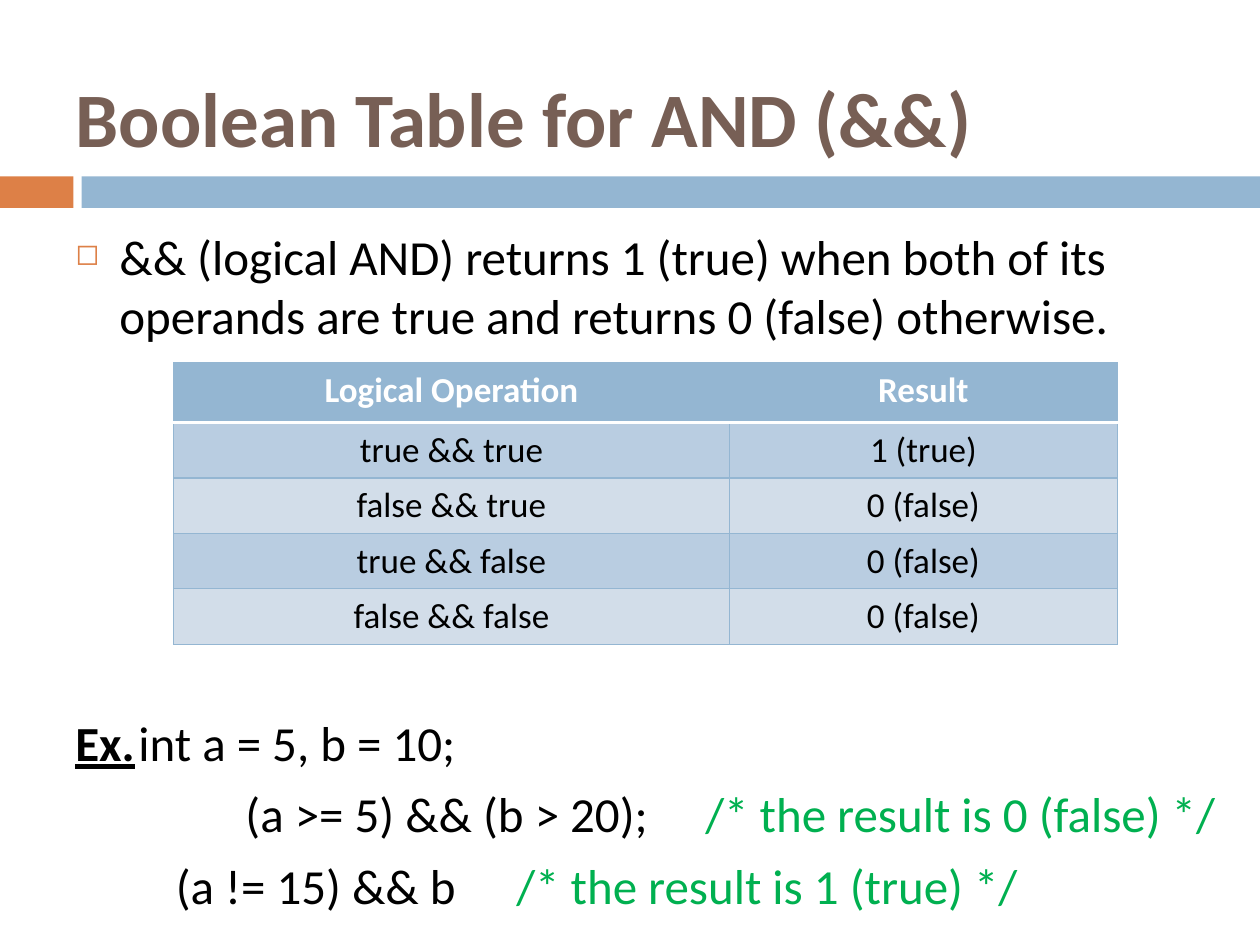
import lxml.etree
import pptx
import pptx.dml.color
import pptx.enum.shapes
import pptx.enum.text
import pptx.oxml.ns
import pptx.util

Pt = pptx.util.Pt
qn = pptx.oxml.ns.qn
Align = pptx.enum.text.PP_ALIGN
Anchor = pptx.enum.text.MSO_ANCHOR

FONT = "Calibri"
BLUE, ORANGE, BROWN = "94B6D2", "DD8047", "775F55"
BLACK, WHITE, GREEN = "000000", "FFFFFF", "00B050"
BAND_DARK, BAND_LIGHT = "B9CDE1", "D2DDE9"


def color(value):
    return pptx.dml.color.RGBColor.from_string(value)


def add_span(para, text, size, ink=BLACK, bold=False, underline=False):
    span = para.add_run()
    span.text = text
    span.font.name = FONT
    span.font.size = Pt(size)
    span.font.bold = bold
    span.font.underline = underline
    span.font.color.rgb = color(ink)


def add_child(parent, tag, **attributes):
    return lxml.etree.SubElement(parent, qn(tag), attributes)


def add_text_box(page, left, top, width, height):
    frame = page.shapes.add_textbox(Pt(left), Pt(top), Pt(width), Pt(height)).text_frame
    frame.word_wrap = True
    return frame


def add_title(page, left, top, width, height):
    title = page.shapes.title
    title.left, title.top, title.width, title.height = map(Pt, (left, top, width, height))
    frame = title.text_frame
    frame.auto_size = pptx.enum.text.MSO_AUTO_SIZE.NONE
    frame.vertical_anchor = Anchor.MIDDLE
    para = frame.paragraphs[0]
    para.alignment = Align.LEFT
    add_span(para, "Boolean Table for AND (&&)", 44, BROWN, bold=True)


def add_divider(page, left, top, width, height):
    """Draw the short orange bar and the long blue bar, split by a gap."""
    short, gap = 42, 4.6
    rest = short + gap
    for offset, length, fill in ((0, short, ORANGE), (rest, width - rest, BLUE)):
        bar = page.shapes.add_shape(
            pptx.enum.shapes.MSO_SHAPE.RECTANGLE,
            Pt(left + offset), Pt(top), Pt(length), Pt(height))
        bar.shadow.inherit = False
        bar.fill.solid()
        bar.fill.fore_color.rgb = color(fill)
        bar.line.fill.background()


def add_definition(page, left, top, width, height):
    para = add_text_box(page, left, top, width, height).paragraphs[0]
    add_span(para, "&& (logical AND) returns 1 (true) when both of its "
                   "operands are true and returns 0 (false) otherwise.", 28)
    properties = para._p.get_or_add_pPr()
    properties.set("marL", str(Pt(25.2)))
    properties.set("indent", str(Pt(-25.2)))
    add_child(add_child(properties, "a:buClr"), "a:srgbClr", val=ORANGE)
    add_child(properties, "a:buSzPct", val="60000")
    add_child(properties, "a:buChar", char="◻")


def set_borders(cell, **edges):
    """Draw edges given as L, R, T, B, in that order, each a (colour, width)."""
    properties = cell._tc.get_or_add_tcPr()
    for side, (ink, width) in edges.items():
        line = add_child(properties, "a:ln" + side, w=str(Pt(width)))
        add_child(add_child(line, "a:solidFill"), "a:srgbClr", val=ink)


def add_truth_table(page, left, top, width, height):
    rows = [
        ("Logical Operation", "Result"),
        ("true && true", "1 (true)"),
        ("false && true", "0 (false)"),
        ("true && false", "0 (false)"),
        ("false && false", "0 (false)"),
    ]
    header_height, first_column = 34, 317.6
    row_height = (height - header_height) / (len(rows) - 1)
    table = page.shapes.add_table(
        len(rows), 2, Pt(left), Pt(top), Pt(width), Pt(height)).table
    table.columns[0].width = Pt(first_column)
    table.columns[1].width = Pt(width - first_column)
    thin, rule = (BLUE, 0.79), (WHITE, 1.5)
    for i, texts in enumerate(rows):
        header = i == 0
        table.rows[i].height = Pt(header_height if header else row_height)
        fill = BLUE if header else BAND_DARK if i % 2 else BAND_LIGHT
        for j, text in enumerate(texts):
            cell = table.cell(i, j)
            set_borders(cell, L=thin, R=thin, T=rule if i == 1 else thin,
                        B=rule if header else thin)
            cell.fill.solid()
            cell.fill.fore_color.rgb = color(fill)
            para = cell.text_frame.paragraphs[0]
            para.alignment = Align.CENTER
            add_span(para, text, 20, WHITE if header else BLACK, bold=header)


def add_example(page, left, top, width, height):
    """Each line has a first indent, a tab stop, and the spans around the tab."""
    heading = {"bold": True, "underline": True}
    comment = {"ink": GREEN}
    lines = [
        (0, 97.2, ("Ex.", heading), ("int a = 5, b = 10;", {})),
        (97.2, 339.4, ("(a >= 5) && (b > 20);", {}),
         ("/* the result is 0 (false) */", comment)),
        (57.4, 292.2, ("(a != 15) && b", {}),
         ("/* the result is 1 (true) */", comment)),
    ]
    frame = add_text_box(page, left, top, width, height)
    for i, (indent, stop, before, after) in enumerate(lines):
        para = frame.add_paragraph() if i else frame.paragraphs[0]
        para.space_before = Pt(7 if i else 0)
        properties = para._p.get_or_add_pPr()
        properties.set("marL", "0")
        properties.set("indent", str(Pt(indent)))
        add_child(add_child(properties, "a:tabLst"), "a:tab", pos=str(Pt(stop)), algn="l")
        for text, style in (before, ("\t", {}), after):
            add_span(para, text, 28, **style)


def main():
    deck = pptx.Presentation()
    deck.slide_width, deck.slide_height = Pt(720), Pt(540)
    page = deck.slides.add_slide(deck.slide_layouts[5])
    add_divider(page, 0, 100.8, 720, 18)
    add_title(page, 36, 21.6, 648, 90)
    add_definition(page, 36, 126, 669.6, 76)
    add_truth_table(page, 99.2, 207.4, 539.4, 160.8)
    add_example(page, 36, 403.8, 669.6, 121)
    deck.save("out.pptx")


if __name__ == "__main__":
    main()
